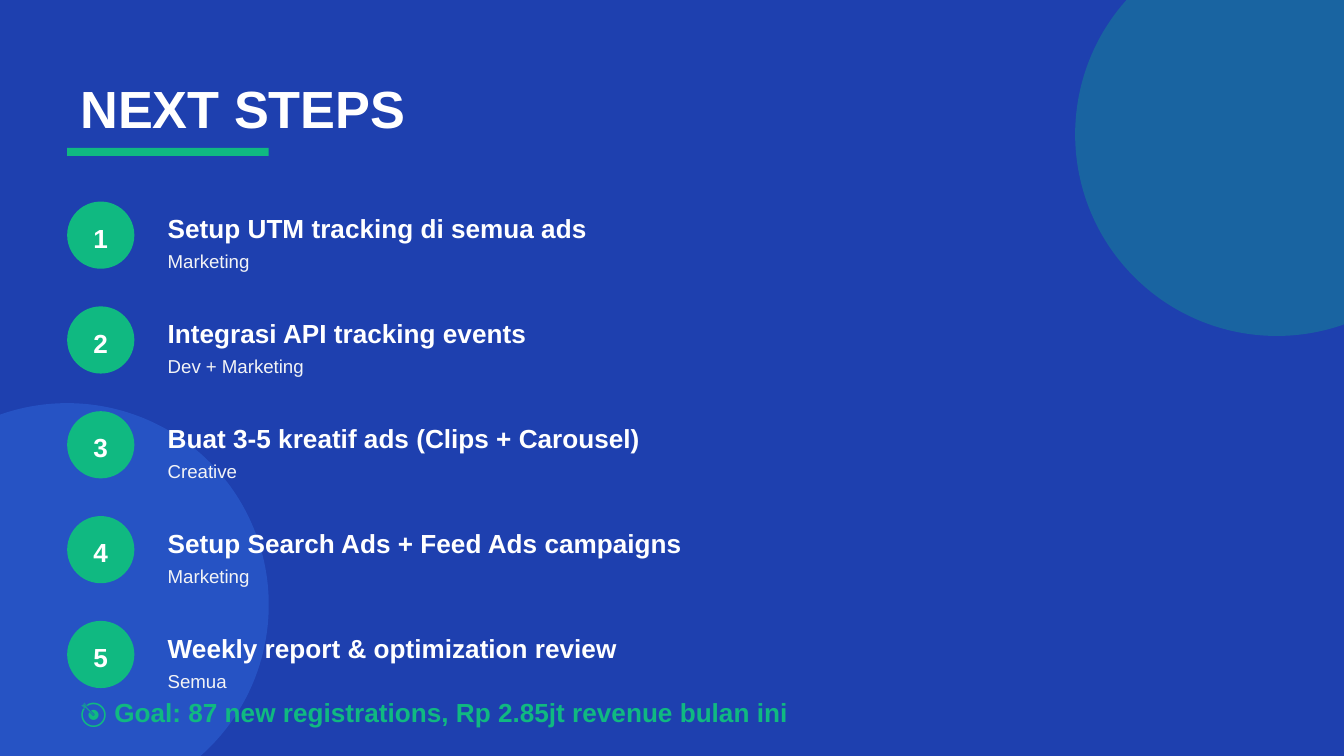
"""Build the Next Steps slide with five numbered actions and a goal line."""
import pptx
import pptx.util
import pptx.dml.color
import pptx.enum.shapes
import pptx.enum.text
import pptx.oxml
import pptx.oxml.ns
import lxml.etree
from dataclasses import dataclass

TITLE = "NEXT STEPS"
STEPS = [
    ("Setup UTM tracking di semua ads", "Marketing"),
    ("Integrasi API tracking events", "Dev + Marketing"),
    ("Buat 3-5 kreatif ads (Clips + Carousel)", "Creative"),
    ("Setup Search Ads + Feed Ads campaigns", "Marketing"),
    ("Weekly report & optimization review", "Semua"),
]
GOAL = "🎯 Goal: 87 new registrations, Rp 2.85jt revenue bulan ini"


@dataclass(frozen=True)
class Theme:
    """Colours, font and type sizes."""
    back: str = "1E40AF"
    blue: str = "3B82F6"
    green: str = "10B981"
    white: str = "FFFFFF"
    pale: str = "F3F4F6"
    font: str = "Arial"
    big: int = 28
    body: int = 14
    small: int = 10


THEME = Theme()
WIDTH, HEIGHT = 720, 405
LEFT, INDENT = 36, 82.8
TOP, PITCH, DISC = 108, 56.16, 36
SHAPES = pptx.enum.shapes.MSO_SHAPE
ALIGN = pptx.enum.text.PP_ALIGN


def color(code):
    """Turn a hex code into a colour."""
    return pptx.dml.color.RGBColor.from_string(code)


def points(*sizes):
    """Turn numbers into lengths in points."""
    return [pptx.util.Pt(size) for size in sizes]


def add_form(slide, kind, box, code, alpha=None):
    """Add a plain filled shape, see-through if alpha is a percentage."""
    form = slide.shapes.add_shape(kind, *points(*box))
    form.shadow.inherit = False
    form.fill.solid()
    form.fill.fore_color.rgb = color(code)
    form.line.fill.background()
    if alpha is not None:
        qn = pptx.oxml.ns.qn
        fill = form.fill.fore_color and form.element.spPr.find(qn("a:solidFill"))
        lxml.etree.SubElement(fill[0], qn("a:alpha")).set("val", str(alpha * 1000))


def add_text(slide, text, box, size, code, bold=True, align=ALIGN.LEFT):
    """Add one line of text, centred in height."""
    frame = slide.shapes.add_textbox(*points(*box)).text_frame
    frame.word_wrap = True
    frame.vertical_anchor = pptx.enum.text.MSO_ANCHOR.MIDDLE
    frame.text = text
    line = frame.paragraphs[0]
    line.alignment = align
    font = line.runs[0].font
    font.name, font.size, font.bold = THEME.font, pptx.util.Pt(size), bold
    font.color.rgb = color(code)


def add_step(slide, index, task, owner):
    """Add a numbered disc with its task and owner."""
    top = TOP + index * PITCH
    add_form(slide, SHAPES.OVAL, (LEFT, top, DISC, DISC), THEME.green)
    add_text(slide, str(index + 1), (LEFT, top + 5.04, DISC, 28.8),
             THEME.body, THEME.white, align=ALIGN.CENTER)
    add_text(slide, task, (INDENT, top + 3.6, 432, 21.6), THEME.body, THEME.white)
    add_text(slide, owner, (INDENT, top + 23.04, 216, 18),
             THEME.small, THEME.pale, bold=False)


def main():
    """Build and save the deck."""
    deck = pptx.Presentation()
    deck.slide_width, deck.slide_height = points(WIDTH, HEIGHT)
    slide = deck.slides.add_slide(deck.slide_layouts[6])
    slide.background.fill.solid()
    slide.background.fill.fore_color.rgb = color(THEME.back)

    add_form(slide, SHAPES.OVAL, (-72, 216, 216, 216), THEME.blue, 30)
    add_form(slide, SHAPES.OVAL, (576, -36, 216, 216), THEME.green, 30)
    add_text(slide, TITLE, (LEFT, 36, 648, 43.2), THEME.big, THEME.white)
    add_form(slide, SHAPES.RECTANGLE, (LEFT, 79.2, 108, 4.32), THEME.green)
    for index, (task, owner) in enumerate(STEPS):
        add_step(slide, index, task, owner)
    add_text(slide, GOAL, (LEFT, 367.2, 648, 28.8), THEME.body, THEME.green)
    deck.save("out.pptx")


if __name__ == "__main__":
    main()
